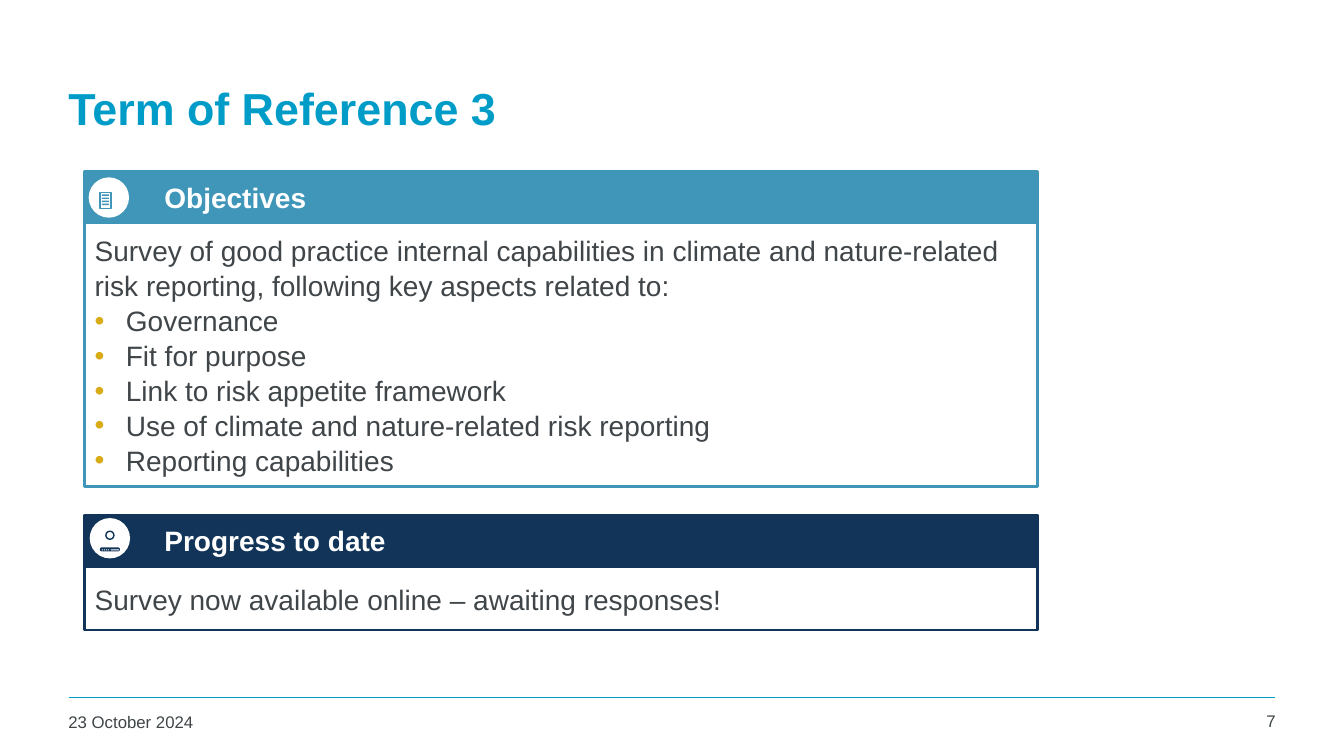
"""Build the Term of Reference 3 slide: two headed panels with icons and a footer."""
from math import cos, pi, sin

from lxml import etree
from pptx import Presentation
from pptx.dml.color import RGBColor
from pptx.enum.shapes import MSO_CONNECTOR, MSO_SHAPE
from pptx.enum.text import MSO_ANCHOR, PP_ALIGN
from pptx.oxml.ns import qn
from pptx.util import Inches, Pt

RECT, OVAL, ROUNDED = MSO_SHAPE.RECTANGLE, MSO_SHAPE.OVAL, MSO_SHAPE.ROUNDED_RECTANGLE
STRAIGHT = MSO_CONNECTOR.STRAIGHT
TOP, MIDDLE = MSO_ANCHOR.TOP, MSO_ANCHOR.MIDDLE
LEFT, RIGHT = PP_ALIGN.LEFT, PP_ALIGN.RIGHT
EMU = Inches(1)
color = RGBColor.from_string
CYAN, TEAL, NAVY = "009CC8", "4096B8", "113458"
GREY, GOLD, WHITE = "3F4548", "D9AB16", "FFFFFF"
PANEL_LEFT, PANEL_WIDTH, HEADER_HEIGHT = 0.84, 9.45, 0.51

deck = Presentation()
deck.slide_width, deck.slide_height = Inches(13.33), Inches(7.5)
slide = deck.slides.add_slide(deck.slide_layouts[6])
shapes = slide.shapes


def paint(shape, fill=None, line=None, weight=1):
    """Set fill and outline, and remove the shadow."""
    shape.shadow.inherit = False
    if fill:
        shape.fill.solid()
        shape.fill.fore_color.rgb = color(fill)
    else:
        shape.fill.background()
    if line:
        shape.line.color.rgb = color(line)
        shape.line.width = Pt(weight)
    else:
        shape.line.fill.background()


def write(shape, lines, size, ink, bold=False, align=LEFT, anchor=MIDDLE, inset=0.1, spacing=1.0):
    """Write lines into a shape; every line after the first is bulleted."""
    frame = shape.text_frame
    frame.word_wrap = True
    frame.vertical_anchor = anchor
    frame.margin_left = Inches(inset)
    for index, line in enumerate(lines):
        paragraph = frame.add_paragraph() if index else frame.paragraphs[0]
        paragraph.text = line
        paragraph.alignment = align
        paragraph.line_spacing = spacing
        if index:
            props = paragraph._p.get_or_add_pPr()
            props.set("marL", str(Inches(0.31)))
            props.set("indent", str(-Inches(0.31)))
            bullet_color = etree.SubElement(props, qn("a:buClr"))
            etree.SubElement(bullet_color, qn("a:srgbClr"), val=GOLD)
            etree.SubElement(props, qn("a:buFont"), typeface="Arial")
            etree.SubElement(props, qn("a:buChar"), char="•")
        paragraph.font.name = "Arial"
        paragraph.font.size = Pt(size)
        paragraph.font.bold = bold
        paragraph.font.color.rgb = color(ink)


footer_rule = shapes.add_connector(STRAIGHT, *map(Inches, (0.68, 6.92, 12.65, 6.92)))
footer_rule.line.color.rgb = color(CYAN)
footer_rule.line.width = Pt(1)
etree.SubElement(footer_rule._element.spPr, qn("a:effectLst"))

labels = [
    ("Term of Reference 3", (0.58, 0.44, 12.09, 1.25), 32, CYAN, True, LEFT, MIDDLE),
    ("23 October 2024", (0.58, 7.01, 2.94, 0.36), 12, GREY, False, LEFT, TOP),
    ("7", (11.81, 7, 0.94, 0.37), 12, GREY, False, RIGHT, TOP),
]
for text, place, *style in labels:
    write(shapes.add_textbox(*map(Inches, place)), [text], *style)

panels = [
    ("Objectives", TEAL, 1.7, 2.62, (0.88, 1.76), [
        "Survey of good practice internal capabilities in climate and nature-related "
        "risk reporting, following key aspects related to:",
        "Governance",
        "Fit for purpose",
        "Link to risk appetite framework",
        "Use of climate and nature-related risk reporting",
        "Reporting capabilities",
    ]),
    ("Progress to date", NAVY, 5.11, 0.63, (0.89, 5.14),
     ["Survey now available online – awaiting responses!"]),
]
for heading, accent, top, body_height, badge_corner, content in panels:
    for lines, y, height, fill, ink, inset, spacing in (
        (content, top + HEADER_HEIGHT, body_height, None, GREY, 0.1, 1.04),
        ([heading], top, HEADER_HEIGHT, accent, WHITE, 0.79, 1.0),
    ):
        block = shapes.add_shape(RECT, *map(Inches, (PANEL_LEFT, y, PANEL_WIDTH, height)))
        paint(block, fill, accent, 2)
        write(block, lines, 20, ink, bold=bool(fill), inset=inset, spacing=spacing)
    badge = shapes.add_shape(OVAL, *map(Inches, (*badge_corner, 0.4, 0.4)))
    paint(badge, WHITE)

front_page = shapes.add_shape(RECT, *map(Inches, (0.99, 1.91, 0.11, 0.16)))
paint(front_page, None, TEAL)
for step in (1, 2):
    x, y = 0.99 + 0.03 * step, 1.91 - 0.03 * step
    builder = shapes.build_freeform(x, y, scale=EMU)
    builder.add_line_segments([(x + 0.11, y), (x + 0.11, y + 0.16)], close=False)
    paint(builder.convert_to_shape(), None, TEAL)
for row in range(4):
    page_line = shapes.add_shape(RECT, *map(Inches, (1.01, 1.93 + 0.03 * row, 0.07, 0.015)))
    paint(page_line, TEAL)

gear_x, gear_y, teeth = 1.09, 5.31, 8
outline = []
for tooth in range(teeth):
    for shift, radius in ((-0.3, 0.075), (-0.2, 0.095), (0.2, 0.095), (0.3, 0.075)):
        angle = 2 * pi * (tooth + shift) / teeth
        outline.append((gear_x + radius * cos(angle), gear_y + radius * sin(angle)))
builder = shapes.build_freeform(*outline[0], scale=EMU)
builder.add_line_segments(outline[1:])
paint(builder.convert_to_shape(), None, NAVY)
gear_hole = shapes.add_shape(OVAL, *map(Inches, (gear_x - 0.04, gear_y - 0.04, 0.08, 0.08)))
paint(gear_hole, None, NAVY)

pencil = shapes.add_shape(ROUNDED, *map(Inches, (0.99, 5.43, 0.2, 0.04)))
pencil.adjustments[0] = 0.5
paint(pencil, NAVY)
pencil_marks = [(1.1, 0.08)] + [(1.01 + 0.02 * mark, 0.01) for mark in range(4)]
for x, width in pencil_marks:
    paint(shapes.add_shape(RECT, *map(Inches, (x, 5.45, width, 0.01))), WHITE)

deck.save("out.pptx")
